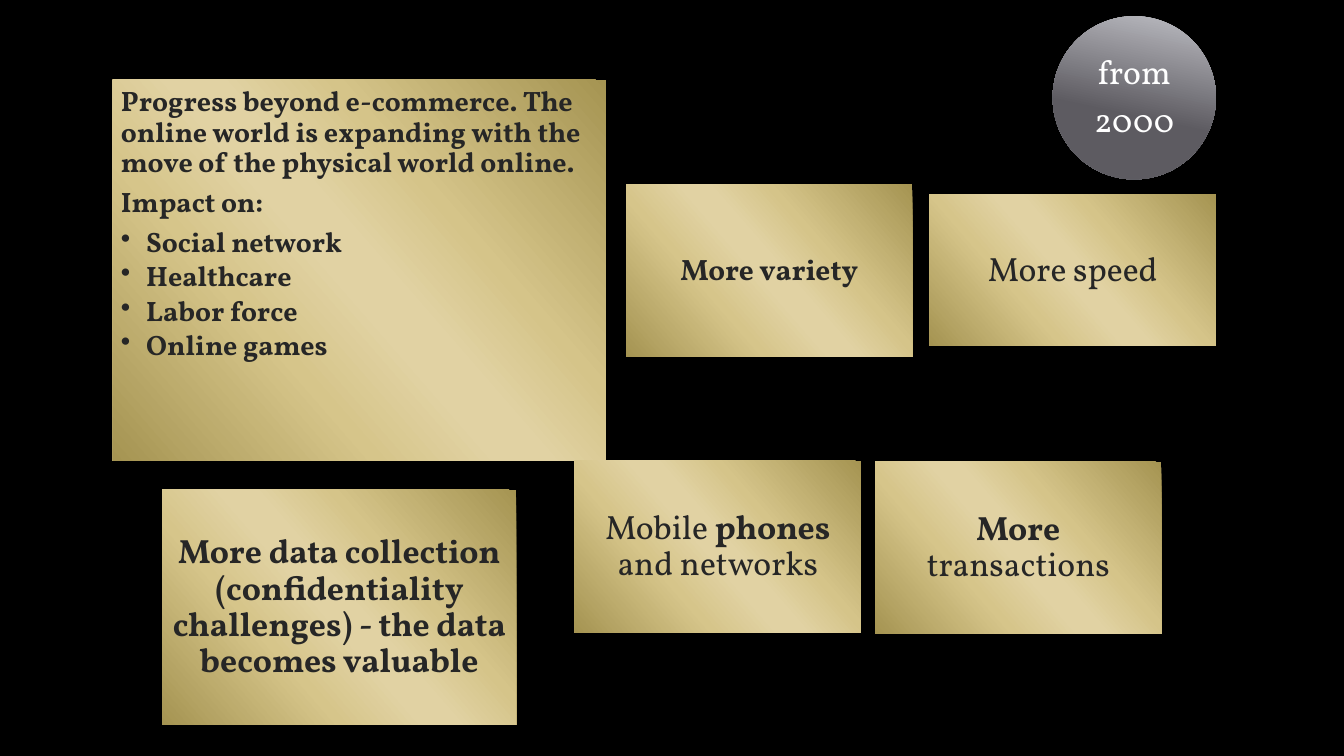
from dataclasses import dataclass

from lxml import etree
from pptx import Presentation
from pptx.dml.color import RGBColor
from pptx.enum.shapes import MSO_SHAPE
from pptx.enum.text import MSO_ANCHOR, PP_ALIGN
from pptx.oxml.ns import qn
from pptx.slide import Slide
from pptx.text.text import TextFrame
from pptx.util import Inches, Pt

RECT, OVAL = MSO_SHAPE.RECTANGLE, MSO_SHAPE.OVAL
TOP, MIDDLE = MSO_ANCHOR.TOP, MSO_ANCHOR.MIDDLE
LEFT, CENTER = PP_ALIGN.LEFT, PP_ALIGN.CENTER

FONT = "Vollkorn"
BLACK, WHITE, INK = "000000", "FFFFFF", "262626"


@dataclass(frozen=True)
class Blend:
    stops: tuple[tuple[int, str], ...]
    angle: int


@dataclass(frozen=True)
class Line:
    runs: tuple[tuple[str, bool], ...]  # text and bold
    bullet: bool = False


@dataclass(frozen=True)
class Card:
    left: float
    top: float
    width: float
    height: float
    lines: tuple[Line, ...]
    size: int = 24
    inset: float = 0.1
    kind: MSO_SHAPE = RECT
    anchor: MSO_ANCHOR = MIDDLE
    align: PP_ALIGN = CENTER
    color: str = INK


GOLD = Blend(((0, "A59452"), (33, "D5C489"), (47, "E1D2A3"),
              (53, "E1D2A3"), (68, "D6C58A"), (100, "A59452")), 139)
GRAY = Blend(((3, "B9B9BF"), (60, "5D5B61")), 102)


def bold(text: str, bullet: bool = False) -> Line:
    return Line(((text, True),), bullet)


def plain(text: str) -> Line:
    return Line(((text, False),))


# Content
IMPACTS = ("Social network", "Healthcare", "Labor force", "Online games")
INTRO = (
    bold("Progress beyond e-commerce. The online world is expanding "
         "with the move of the physical world online."),
    bold("Impact on:"),
    *(bold(item, True) for item in IMPACTS),
)
DATA = (bold("More data collection (confidentiality challenges) - "
             "the data becomes valuable"),)
PHONES = (Line((("Mobile ", False), ("phones", True),
                (" and networks", False))),)
TRADE = (Line((("More", True), (" transactions", False))),)

CARDS = (
    Card(10.44, 0.16, 1.62, 1.62, (plain("from"), plain("2000")),
         inset=0, kind=OVAL, color=WHITE),
    Card(1.12, 0.79, 4.89, 3.78, INTRO, size=20, inset=0.08,
         anchor=TOP, align=LEFT),
    Card(6.21, 1.83, 2.84, 1.71, (bold("More variety"),), size=21,
         inset=0.09),
    Card(9.22, 1.93, 2.84, 1.5, (plain("More speed"),)),
    Card(1.61, 4.86, 3.51, 2.33, DATA),
    Card(5.7, 4.57, 2.84, 1.71, PHONES),
    Card(8.68, 4.58, 2.84, 1.71, TRADE),
)


def rgb(code: str) -> RGBColor:
    return RGBColor.from_string(code)


def shade(props: etree._Element, blend: Blend) -> None:
    """Put a linear gradient right after the shape's geometry."""
    grad = etree.Element(qn("a:gradFill"), rotWithShape="1")
    stops = etree.SubElement(grad, qn("a:gsLst"))
    for place, code in blend.stops:
        stop = etree.SubElement(stops, qn("a:gs"), pos=str(place * 1000))
        etree.SubElement(stop, qn("a:srgbClr"), val=code)
    etree.SubElement(grad, qn("a:lin"), ang=str(blend.angle * 60000),
                     scaled="0")
    props.find(qn("a:prstGeom")).addnext(grad)


def write(frame: TextFrame, card: Card) -> None:
    frame.word_wrap = True
    frame.vertical_anchor = card.anchor
    frame.margin_left = frame.margin_right = Inches(card.inset)
    frame.margin_top = frame.margin_bottom = Inches(card.inset)
    for i, line in enumerate(card.lines):
        para = frame.add_paragraph() if i else frame.paragraphs[0]
        para.alignment = card.align
        para.line_spacing = 0.9
        para.space_after = Pt(card.size * (0.15 if line.bullet else 0.35))
        if line.bullet:
            props = para._p.get_or_add_pPr()
            props.set("marL", str(Inches(0.25)))
            props.set("indent", str(Inches(-0.25)))
            etree.SubElement(props, qn("a:buChar"), char="•")
        para.font.name = FONT
        para.font.size = Pt(card.size)
        para.font.color.rgb = rgb(card.color)
        for text, heavy in line.runs:
            run = para.add_run()
            run.text = text
            run.font.bold = heavy


def draw(slide: Slide, card: Card) -> None:
    box = (card.left, card.top, card.width, card.height)
    shape = slide.shapes.add_shape(card.kind, *map(Inches, box))
    shape.shadow.inherit = False
    shape.line.fill.background()
    shade(shape._element.spPr, GRAY if card.kind == OVAL else GOLD)
    write(shape.text_frame, card)


def main() -> None:
    deck = Presentation()
    deck.slide_width, deck.slide_height = Inches(13.33), Inches(7.5)
    slide = deck.slides.add_slide(deck.slide_layouts[6])

    # Background
    slide.background.fill.solid()
    slide.background.fill.fore_color.rgb = rgb(BLACK)

    # Date circle and topic cards
    for card in CARDS:
        draw(slide, card)
    deck.save("out.pptx")


if __name__ == "__main__":
    main()
